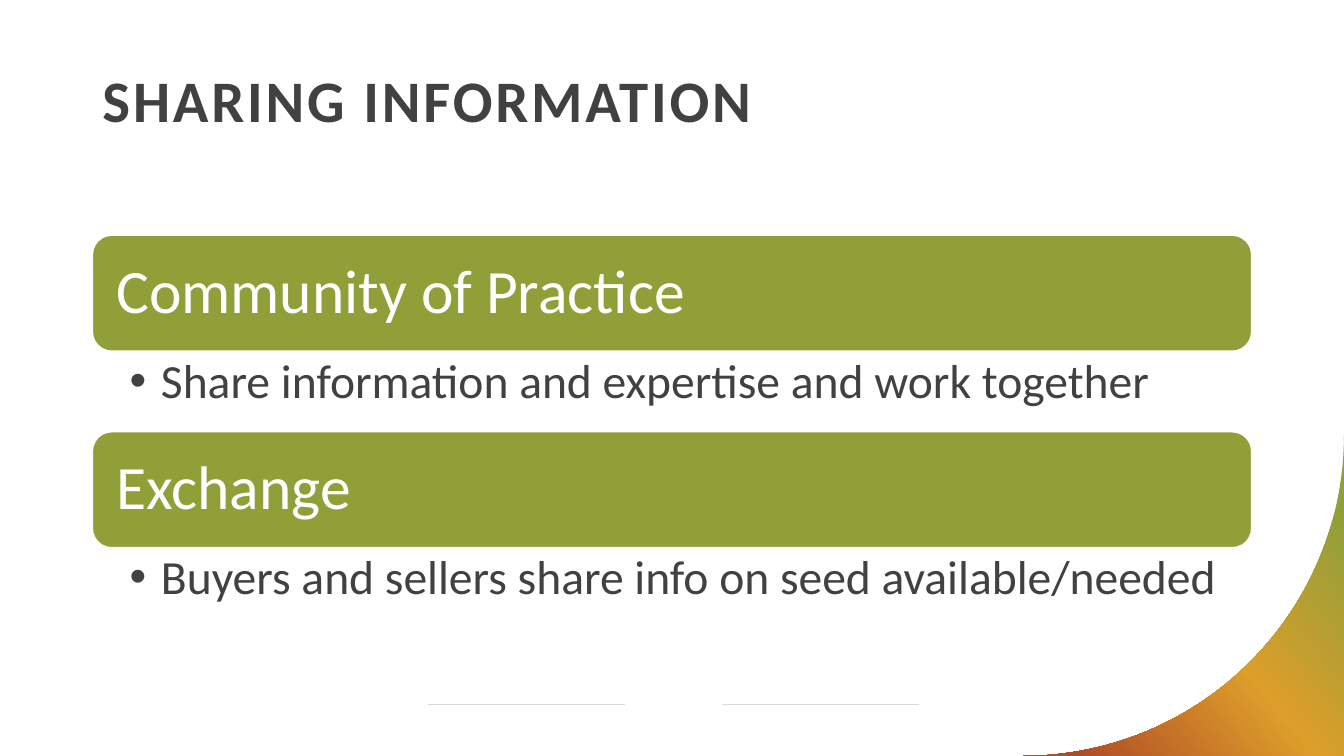
from copy import deepcopy
from dataclasses import dataclass
from math import cos, pi, sin

from lxml.etree import SubElement as Sub
from pptx import Presentation
from pptx.dml.color import RGBColor
from pptx.enum.shapes import MSO_CONNECTOR as Link, MSO_SHAPE as Kind
from pptx.enum.text import MSO_ANCHOR as Anchor, MSO_AUTO_SIZE as Fit, PP_ALIGN as Align
from pptx.oxml.ns import qn
from pptx.slide import Slide
from pptx.text.text import TextFrame
from pptx.util import Inches, Pt

WHITE = RGBColor(0xFF, 0xFF, 0xFF)
INK = RGBColor(0x41, 0x40, 0x42)
GREEN = RGBColor(0x91, 0x9F, 0x39)
AMBER = RGBColor(0xDD, 0x9E, 0x2A)
RUST = RGBColor(0xAF, 0x4C, 0x26)
GREY = RGBColor(0xD9, 0xD8, 0xDA)

FONT = "Calibri"
WIDE, HIGH = Inches(13.33), Inches(7.5)
COLS, ROWS = 80, 90
LEFT, SPAN = 5.5, 69
TOP, PITCH = 28, 23.4
BAR, LIST = 13.8, 9.6


@dataclass
class Topic:
    head: str
    point: str


TOPICS = [
    Topic("Community of Practice", "Share information and expertise and work together"),
    Topic("Exchange", "Buyers and sellers share info on seed available/needed"),
]


def col(count: float) -> int:
    return round(WIDE * count / COLS)


def row(count: float) -> int:
    return round(HIGH * count / ROWS)


def place(shape, top: float, high: float) -> None:
    """Set a shape across the content columns."""
    shape.left, shape.top = col(LEFT), row(top)
    shape.width, shape.height = col(SPAN), row(high)


def write(frame: TextFrame, text: str, size: float, color: RGBColor,
          pads: tuple, anchor: Anchor = Anchor.TOP, bold: bool = False) -> None:
    """Fill a frame with one paragraph; pads are left, top, right, bottom inches."""
    frame.text = text
    frame.word_wrap, frame.auto_size = True, Fit.NONE
    frame.vertical_anchor = anchor
    (frame.margin_left, frame.margin_top,
     frame.margin_right, frame.margin_bottom) = map(Inches, pads)
    para = frame.paragraphs[0]
    para.alignment, para.line_spacing = Align.LEFT, 0.9
    para.space_before = Pt(0)
    font = para.runs[0].font
    font.name, font.size, font.bold = FONT, Pt(size), bold
    font.color.rgb = color


def add_rule(slide: Slide, start: float) -> None:
    level = row(83.8)
    rule = slide.shapes.add_connector(
        Link.STRAIGHT, col(start), level, col(start + 11.7), level)
    rule.line.color.rgb, rule.line.width = GREY, Pt(0.5)
    Sub(rule._element.spPr, qn("a:effectLst"))


def add_corner(slide: Slide) -> None:
    """Draw the gradient area outside a quarter circle at the lower right."""
    left, top, steps = 60.9, 51.8, 60
    turns = [pi / 2 * (1 - step / steps) for step in range(steps + 1)]
    arc = [(col(left + (COLS - left) * sin(turn)),
            row(top + (ROWS - top) * cos(turn))) for turn in turns]
    pen = slide.shapes.build_freeform(WIDE, HIGH)
    pen.add_line_segments(arc, close=True)
    shape = pen.convert_to_shape()
    shape.shadow.inherit = False
    shape.line.fill.background()
    fill = shape.fill
    fill.gradient()
    fill.gradient_angle = 220
    stops = shape._element.spPr.find(".//" + qn("a:gsLst"))
    stops.append(deepcopy(stops[0]))
    shades = [(0.12, GREEN), (0.5, AMBER), (0.91, RUST)]
    for stop, (share, color) in zip(fill.gradient_stops, shades):
        stop.position, stop.color.rgb = share, color


def add_bar(slide: Slide, text: str, top: float) -> None:
    bar = slide.shapes.add_shape(Kind.ROUNDED_RECTANGLE, 0, 0, 0, 0)
    place(bar, top, BAR)
    bar.shadow.inherit = False
    bar.fill.solid()
    bar.fill.fore_color.rgb = GREEN
    bar.line.color.rgb, bar.line.width = WHITE, Pt(1)
    write(bar.text_frame, text, 44, WHITE, (0.18,) * 4, Anchor.MIDDLE)


def fill_list(body, text: str, top: float) -> None:
    place(body, top, LIST)
    frame = body.text_frame
    write(frame, text, 34, INK, (0.37, 0.06, 0.34, 0.06))
    para = frame.paragraphs[0]
    para.level = 1
    props = para._p.get_or_add_pPr()
    props.set("marL", str(Inches(0.31)))
    props.set("indent", str(Inches(-0.31)))
    Sub(props, qn("a:buFont")).set("typeface", "Arial")
    Sub(props, qn("a:buChar")).set("char", "•")


def main() -> None:
    deck = Presentation()
    deck.slide_width, deck.slide_height = WIDE, HIGH
    slide = deck.slides.add_slide(deck.slide_layouts.get_by_name("Two Content"))
    title, *lists = slide.placeholders
    for start in (25.5, 43):
        add_rule(slide, start)
    add_corner(slide)
    place(title, 7.9, 15.8)
    write(title.text_frame, "SHARING INFORMATION", 42, INK,
          (0.1, 0.05, 0.1, 0.05), bold=True)
    title.text_frame.paragraphs[0].runs[0].font._element.set("spc", "200")
    for index, (topic, body) in enumerate(zip(TOPICS, lists)):
        top = TOP + index * PITCH
        add_bar(slide, topic.head, top)
        fill_list(body, topic.point, top + BAR)
    deck.save("out.pptx")


if __name__ == "__main__":
    main()
